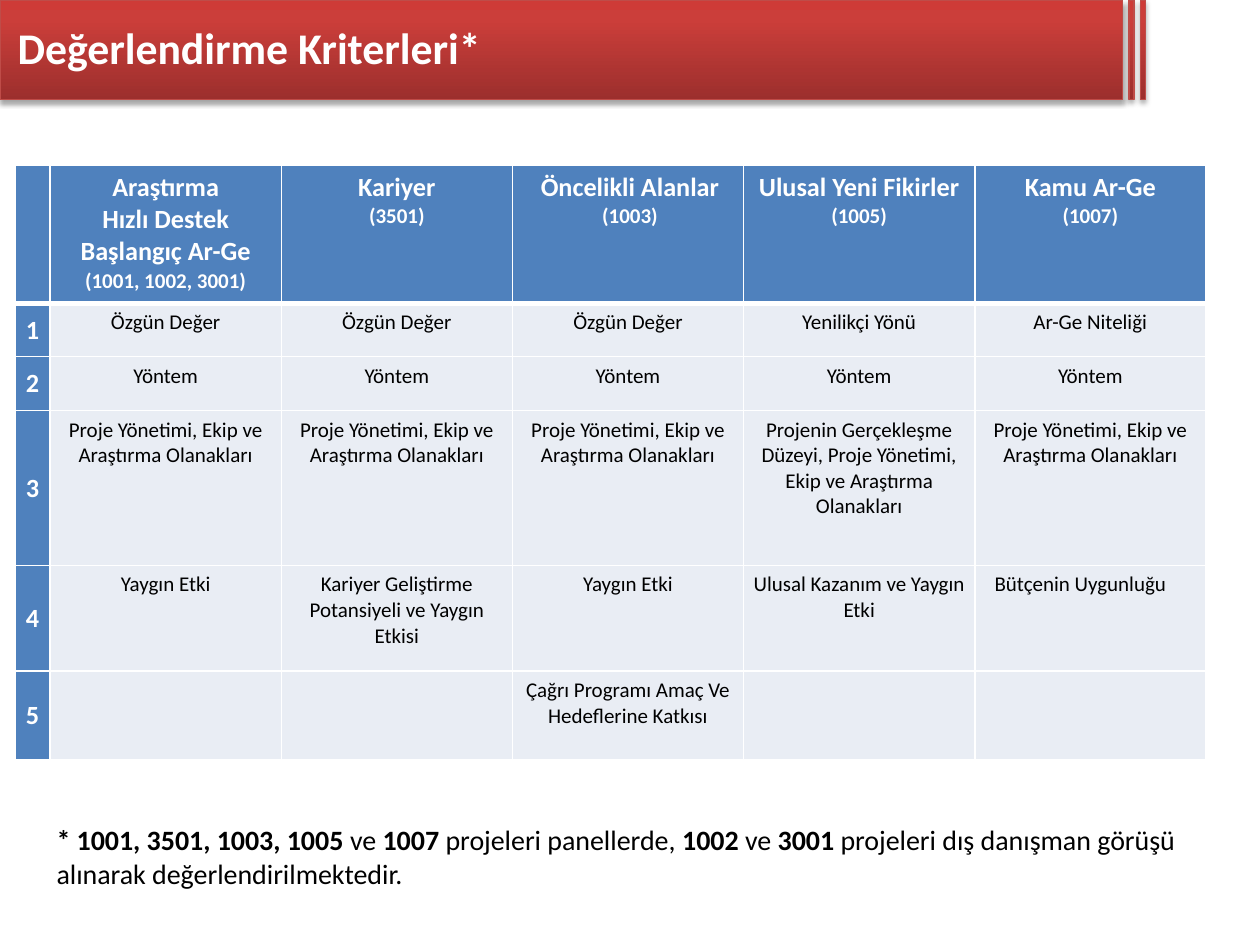
import pptx
import pptx.util
import pptx.dml.color
import pptx.enum.shapes
import pptx.enum.text
import pptx.oxml.ns
from dataclasses import dataclass
from lxml import etree

Cm = pptx.util.Cm
Pt = pptx.util.Pt
qn = pptx.oxml.ns.qn
ALIGN = pptx.enum.text.PP_ALIGN
ANCHOR = pptx.enum.text.MSO_ANCHOR
FIT = pptx.enum.text.MSO_AUTO_SIZE


@dataclass(frozen=True)
class Theme:
    face: str = "Calibri"
    white: str = "FFFFFF"
    black: str = "000000"
    blue: str = "4F81BD"
    pale: str = "E9EDF4"
    edge: str = "BF4C48"
    reds: tuple = ((0, "9C2F2D"), (80, "CB3E3A"), (100, "CE3B37"))
    title: float = 25
    note: float = 16
    head: float = 15
    body: float = 12


def rgb(code):
    return pptx.dml.color.RGBColor.from_string(code)


def apply(item, values):
    for key, value in values.items():
        setattr(item, key, value)


def add(parent, tag, **attrs):
    """Append an XML child with the given attributes."""
    return etree.SubElement(parent, qn(tag), {k: str(v) for k, v in attrs.items()})


class Deck:
    """Holds the theme and the slide being drawn."""

    def __init__(self, theme):
        self.theme = theme
        self.file = pptx.Presentation()
        apply(self.file, {"slide_width": Cm(25.4), "slide_height": Cm(19.05)})
        self.slide = self.file.slides.add_slide(self.file.slide_layouts[5])

    def run(self, para, text, size, color, bold=False):
        run = para.add_run()
        run.text = text
        apply(run.font, {"name": self.theme.face, "size": Pt(size), "bold": bold})
        run.font.color.rgb = rgb(color)

    def bar(self, left, width):
        """Draw a red bar, shaded from bottom to top, with a soft shadow."""
        kind = pptx.enum.shapes.MSO_SHAPE.RECTANGLE
        bar = self.slide.shapes.add_shape(kind, Cm(left), 0, Cm(width), Cm(2.01))
        bar.fill.gradient()
        bar.fill.gradient_angle = 90
        bar.line.color.rgb = rgb(self.theme.edge)
        bar.line.width = Pt(0.75)
        bar.shadow.inherit = False
        props = bar._element.spPr
        stops = props.find(".//" + qn("a:gsLst"))
        for stop in list(stops):
            stops.remove(stop)
        for pos, color in self.theme.reds:
            add(add(stops, "a:gs", pos=pos * 1000), "a:srgbClr", val=color)
        shade = add(props.find(qn("a:effectLst")), "a:outerShdw", blurRad=Pt(3.1),
                    dist=Pt(1.8), dir=5400000, rotWithShape=0)
        add(add(shade, "a:srgbClr", val=self.theme.black), "a:alpha", val=35000)

    def title(self, text):
        """Fill the title placeholder and bring it in front of the bars."""
        shape = self.slide.shapes.title
        apply(shape, {"left": Cm(0.1), "top": Cm(0.51),
                      "width": Cm(22.61), "height": Cm(1.09)})
        frame = shape.text_frame
        apply(frame, {"word_wrap": True, "auto_size": FIT.SHAPE_TO_FIT_TEXT,
                      "vertical_anchor": ANCHOR.TOP})
        para = frame.paragraphs[0]
        apply(para, {"alignment": ALIGN.LEFT, "line_spacing": 0.78})
        self.run(para, text, self.theme.title, self.theme.white, True)
        self.slide.shapes._spTree.append(shape._element)

    def note(self, parts):
        """Write the footnote, with every other part in bold."""
        box = self.slide.shapes.add_textbox(Cm(0.89), Cm(16.46), Cm(23.39), Cm(1.63))
        frame = box.text_frame
        apply(frame, {"word_wrap": True, "auto_size": FIT.SHAPE_TO_FIT_TEXT})
        for i, part in enumerate(parts):
            self.run(frame.paragraphs[0], part, self.theme.note,
                     self.theme.black, i % 2 == 0)

    def edges(self, cell, top, low):
        """Put white borders round a cell, ahead of its fill."""
        props = cell._tc.get_or_add_tcPr()
        widths = {"a:lnL": 1, "a:lnR": 1, "a:lnT": top, "a:lnB": low}
        for i, (tag, width) in enumerate(widths.items()):
            line = add(props, tag, w=Pt(width))
            add(add(line, "a:solidFill"), "a:srgbClr", val=self.theme.white)
            props.insert(i, line)

    def cell(self, cell, row, col, lines):
        """Style one cell; the last line of a heading is set small."""
        theme = self.theme
        head, key = row == 0, col == 0
        dark = head or key
        gap = Cm(0 if key else 0.13)
        apply(cell, {"margin_" + side: gap for side in ("left", "right", "top", "bottom")})
        cell.vertical_anchor = ANCHOR.MIDDLE if key else ANCHOR.TOP
        cell.fill.solid()
        cell.fill.fore_color.rgb = rgb(theme.blue if dark else theme.pale)
        self.edges(cell, 3 if row == 1 else 1, 3 if head else 1)
        frame = cell.text_frame
        for i, text in enumerate(lines):
            para = frame.add_paragraph() if i else frame.paragraphs[0]
            para.alignment = ALIGN.CENTER
            small = not dark or (head and i == len(lines) - 1)
            self.run(para, text, theme.body if small else theme.head,
                     theme.white if dark else theme.black, dark)

    def table(self, rows, widths, heights):
        shape = self.slide.shapes.add_table(len(rows), len(widths), Cm(0.3), Cm(3.33),
                                            Cm(sum(widths)), Cm(sum(heights)))
        grid = shape.table
        for col, width in zip(grid.columns, widths):
            col.width = Cm(width)
        for r, (row, height) in enumerate(zip(rows, heights)):
            grid.rows[r].height = Cm(height)
            for c, text in enumerate(row):
                self.cell(grid.cell(r, c), r, c, text.split("\n") if text else [])
        return grid


def main():
    deck = Deck(Theme())
    for left, width in ((0, 22.63), (22.76, 0.1), (22.99, 0.1)):
        deck.bar(left, width)
    deck.title("Değerlendirme Kriterleri*")

    value, method, impact = "Özgün Değer", "Yöntem", "Yaygın Etki"
    team = "Proje Yönetimi, Ekip ve Araştırma Olanakları"
    rows = [
        ["", "Araştırma\nHızlı Destek Başlangıç Ar-Ge\n(1001, 1002, 3001)",
         "Kariyer\n(3501)", "Öncelikli Alanlar\n(1003)",
         "Ulusal Yeni Fikirler\n(1005)", "Kamu Ar-Ge\n(1007)"],
        ["1", value, value, value, "Yenilikçi Yönü", "Ar-Ge Niteliği"],
        ["2"] + [method] * 5,
        ["3", team, team, team,
         "Projenin Gerçekleşme Düzeyi, Proje Yönetimi, Ekip ve Araştırma Olanakları",
         team],
        ["4", impact, "Kariyer Geliştirme Potansiyeli ve Yaygın Etkisi", impact,
         "Ulusal Kazanım ve Yaygın Etki", "Bütçenin Uygunluğu"],
        ["5", "", "", "Çağrı Programı Amaç Ve Hedeflerine Katkısı", "", ""],
    ]
    grid = deck.table(rows, [0.71] + [4.66] * 5, [2.79, 1.07, 1.09, 3.12, 2.13, 1.78])
    grid.cell(0, 3).margin_left = Cm(0.21)
    grid.cell(4, 5).margin_right = Cm(0.53)

    deck.note(["* 1001, 3501, 1003, 1005 ", "ve ", "1007 ", "projeleri panellerde, ",
               "1002", " ve ", "3001",
               " projeleri dış danışman görüşü alınarak değerlendirilmektedir."])
    deck.file.save("out.pptx")


if __name__ == "__main__":
    main()
